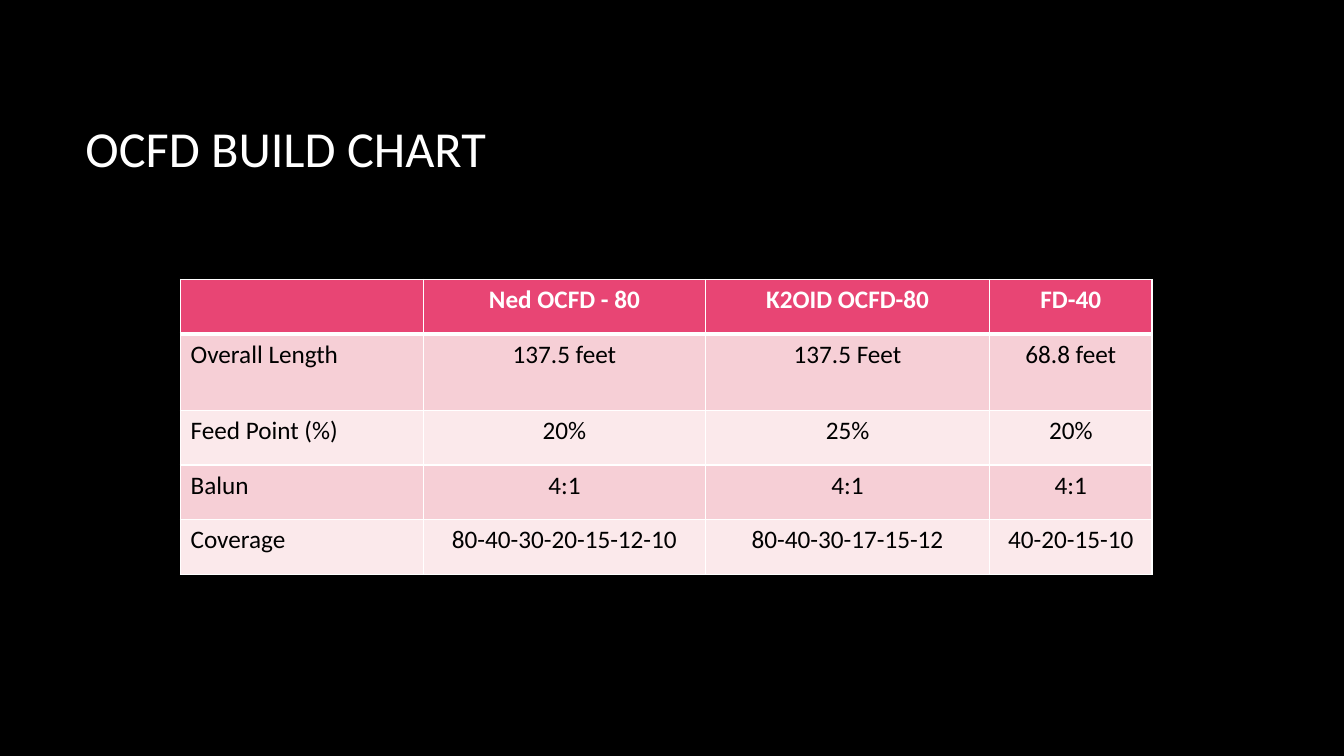
import dataclasses

import pptx
import pptx.dml.color
import pptx.enum.text
import pptx.oxml
import pptx.oxml.ns
import pptx.util

Cm = pptx.util.Cm
Pt = pptx.util.Pt
Align = pptx.enum.text.PP_ALIGN
Anchor = pptx.enum.text.MSO_ANCHOR


@dataclasses.dataclass(frozen=True)
class Theme:
    font: str = "Calibri"
    background: str = "000000"
    light: str = "FFFFFF"
    dark: str = "000000"
    header: str = "E84574"
    bands: tuple = ("F6CFD6", "FBE9EB")
    title_size: int = 36
    table_size: int = 18
    rule: int = 1
    header_rule: int = 3


THEME = Theme()

BUILD_CHART = [
    ["", "Ned OCFD - 80", "K2OID OCFD-80", "FD-40"],
    ["Overall Length", "137.5 feet", "137.5 Feet", "68.8 feet"],
    ["Feed Point (%)", "20%", "25%", "20%"],
    ["Balun", "4:1", "4:1", "4:1"],
    ["Coverage", "80-40-30-20-15-12-10", "80-40-30-17-15-12", "40-20-15-10"],
]
COLUMN_WIDTHS = [6.12, 7.11, 7.16, 4.09]
ROW_HEIGHTS = [1.38, 1.92, 1.38, 1.38, 1.38]


def rgb(value):
    return pptx.dml.color.RGBColor.from_string(value)


def fill_solid(fill, color):
    fill.solid()
    fill.fore_color.rgb = rgb(color)


def write(frame, text, *, size, color, bold=False, align=Align.LEFT, anchor=Anchor.TOP):
    frame.word_wrap = True
    frame.vertical_anchor = anchor
    paragraph = frame.paragraphs[0]
    paragraph.alignment = align
    run = paragraph.add_run()
    run.text = text
    run.font.name = THEME.font
    run.font.size = Pt(size)
    run.font.bold = bold
    run.font.color.rgb = rgb(color)


def set_borders(cell, top, bottom):
    """Rule all four sides, with the given top and bottom widths in points."""
    properties = cell._tc.get_or_add_tcPr()
    sides = {"L": THEME.rule, "R": THEME.rule, "T": top, "B": bottom}
    for position, (side, width) in enumerate(sides.items()):
        line = pptx.oxml.parse_xml(
            f'<a:ln{side} {pptx.oxml.ns.nsdecls("a")} w="{Pt(width)}">'
            f'<a:solidFill><a:srgbClr val="{THEME.light}"/></a:solidFill>'
            f'</a:ln{side}>'
        )
        properties.insert(position, line)


def add_title(slide, text):
    title = slide.shapes.title
    title.left, title.top = Cm(1.9), Cm(1.7)
    title.width, title.height = Cm(28.14), Cm(4.04)
    write(title.text_frame, text, size=THEME.title_size, color=THEME.light,
          anchor=Anchor.MIDDLE)


def format_cell(cell, text, row, column):
    is_header = row == 0
    fill_solid(cell.fill, THEME.header if is_header else THEME.bands[(row - 1) % 2])
    set_borders(cell,
                top=THEME.header_rule if row == 1 else THEME.rule,
                bottom=THEME.header_rule if is_header else THEME.rule)
    if text:
        write(cell.text_frame, text, size=THEME.table_size, bold=is_header,
              color=THEME.light if is_header else THEME.dark,
              align=Align.CENTER if column else Align.LEFT)


def add_build_chart(slide, rows):
    table = slide.shapes.add_table(
        len(rows), len(rows[0]), Cm(4.55), Cm(7.04),
        Cm(sum(COLUMN_WIDTHS)), Cm(sum(ROW_HEIGHTS))).table
    for column, width in zip(table.columns, COLUMN_WIDTHS):
        column.width = Cm(width)
    for row, height in zip(table.rows, ROW_HEIGHTS):
        row.height = Cm(height)
    for row, texts in enumerate(rows):
        for column, text in enumerate(texts):
            format_cell(table.cell(row, column), text, row, column)


def main():
    deck = pptx.Presentation()
    deck.slide_width, deck.slide_height = Cm(33.87), Cm(19.05)
    slide = deck.slides.add_slide(deck.slide_layouts.get_by_name("Title Only"))
    fill_solid(slide.background.fill, THEME.background)
    add_title(slide, "OCFD BUILD CHART")
    add_build_chart(slide, BUILD_CHART)
    deck.save("out.pptx")


if __name__ == "__main__":
    main()
